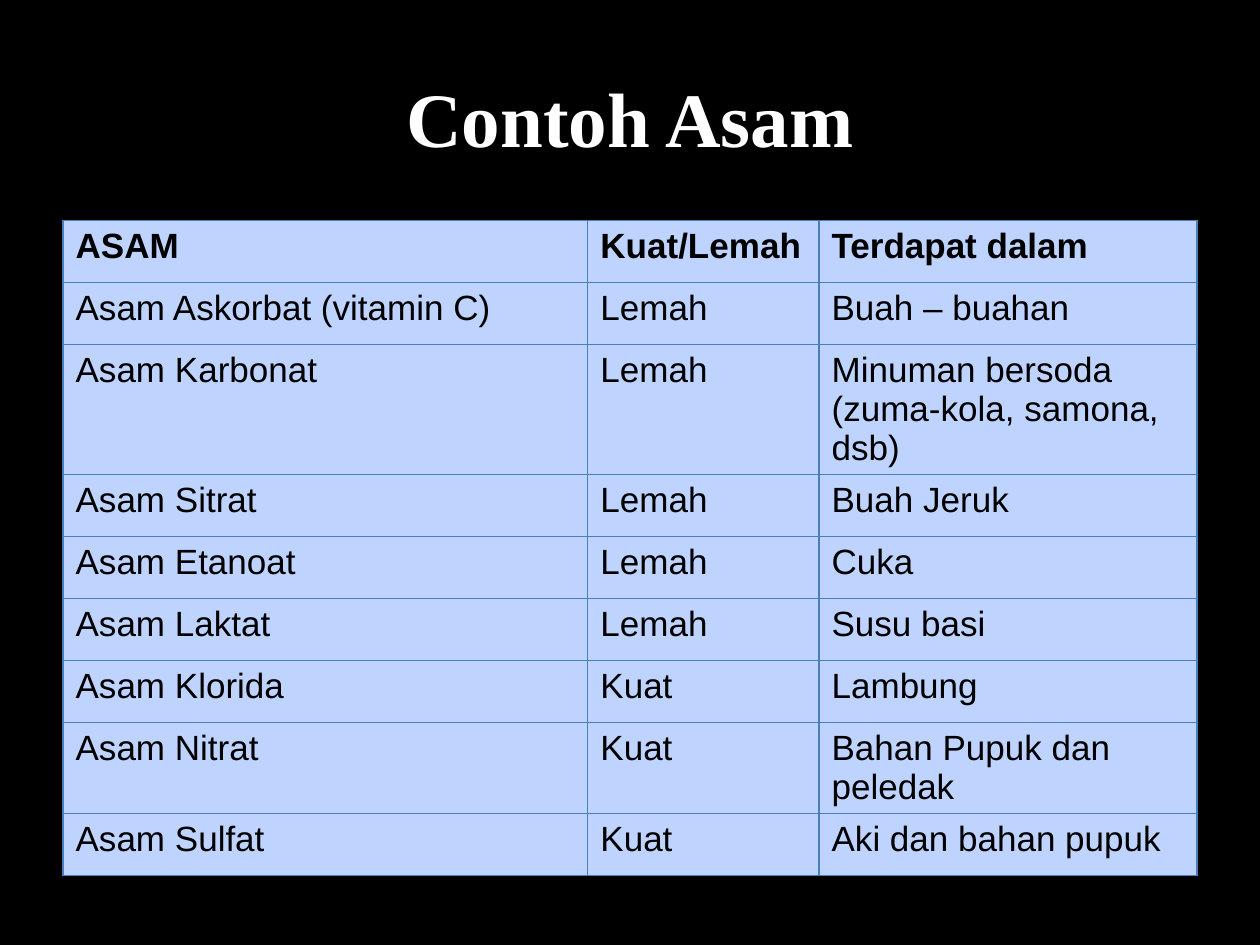
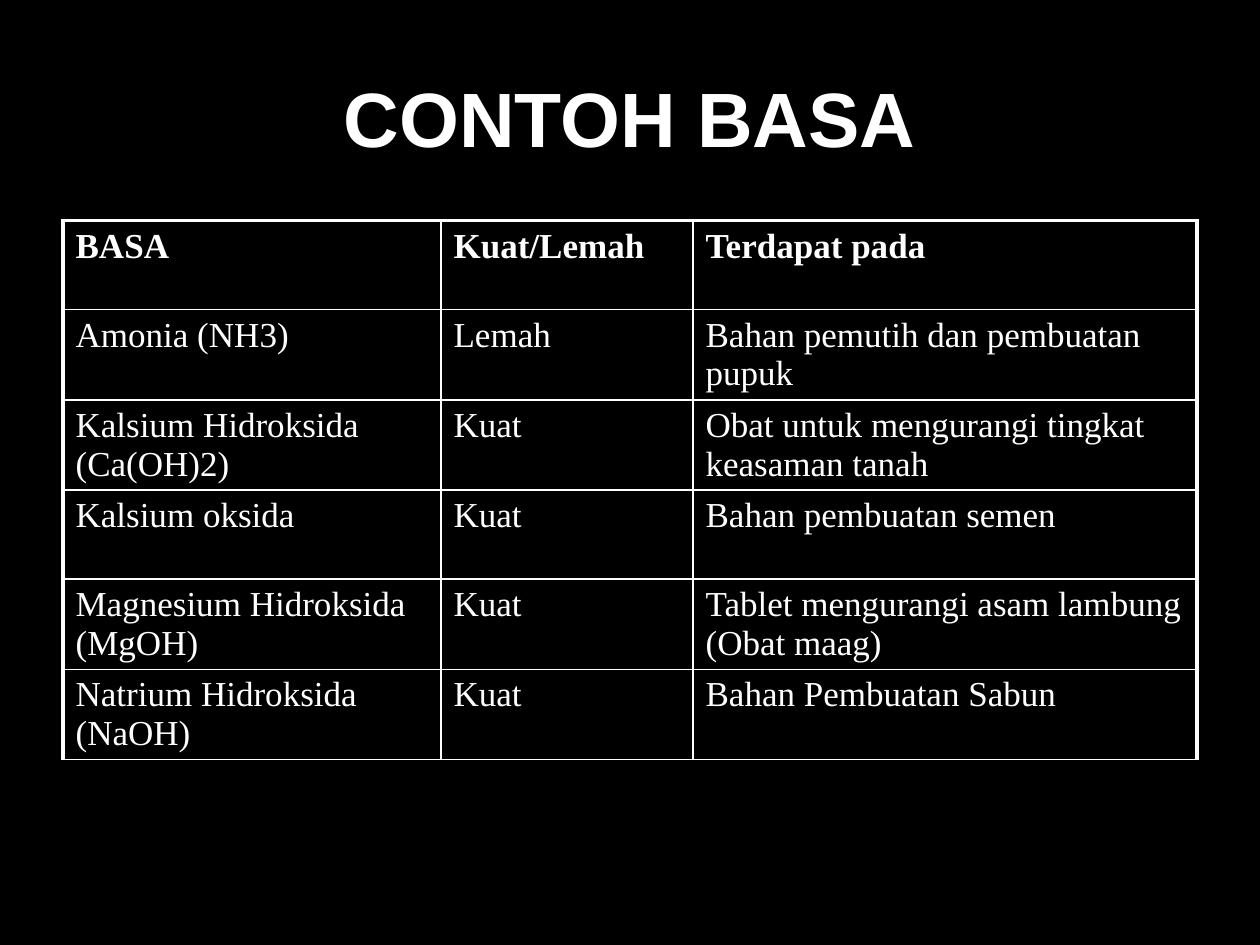
from lxml import etree
from pptx import Presentation
from pptx.dml.color import RGBColor
from pptx.enum.text import MSO_ANCHOR, PP_ALIGN
from pptx.oxml.ns import qn
from pptx.util import Cm, Pt

CENTER, LEFT = PP_ALIGN.CENTER, PP_ALIGN.LEFT
MIDDLE = MSO_ANCHOR.MIDDLE
TITLE_ONLY = 5

COLORS = {
    "background": "000000",
    "light": "FFFFFF",
    "dark": "000000",
    "acid_fill": "BFD3FF",
    "acid_border": "4B7EBC",
}
SANS, SERIF = "Arial", "Times New Roman"
TITLE_SIZE, TABLE_SIZE = 44, 20

MARGIN, CONTENT_WIDTH = 1.27, 22.86
TITLE_TOP, TITLE_HEIGHT = 0.76, 3.18
TABLE_TOP = 4.45

# Border widths are in points: inner lines, outer lines, and the bottom edge.
PAGES = [
    {
        "title": "Contoh Asam",
        "title_font": SERIF,
        "table_font": SANS,
        "text": "dark",
        "fill": "acid_fill",
        "border": "acid_border",
        "widths": {"inner": 0.75, "outer": 0.75, "bottom": 0.75},
        "columns": [10.58, 4.66, 7.62],
        "row_height": 1.25,
        "rows": [
            ("ASAM", "Kuat/Lemah", "Terdapat dalam"),
            ("Asam Askorbat (vitamin C)", "Lemah", "Buah – buahan"),
            ("Asam Karbonat", "Lemah", "Minuman bersoda (zuma-kola, samona, dsb)"),
            ("Asam Sitrat", "Lemah", "Buah Jeruk"),
            ("Asam Etanoat", "Lemah", "Cuka"),
            ("Asam Laktat", "Lemah", "Susu basi"),
            ("Asam Klorida", "Kuat", "Lambung"),
            ("Asam Nitrat", "Kuat", "Bahan Pupuk dan peledak"),
            ("Asam Sulfat", "Kuat", "Aki dan bahan pupuk"),
        ],
    },
    {
        "title": "CONTOH BASA",
        "title_font": SANS,
        "table_font": SERIF,
        "text": "light",
        "fill": None,
        "border": "light",
        "widths": {"inner": 1, "outer": 2.25, "bottom": 1},
        "columns": [7.62, 5.08, 10.16],
        "row_height": 1.79,
        "rows": [
            ("BASA", "Kuat/Lemah", "Terdapat pada"),
            ("Amonia (NH3)", "Lemah", "Bahan pemutih dan pembuatan pupuk"),
            ("Kalsium Hidroksida (Ca(OH)2)", "Kuat",
             "Obat untuk mengurangi tingkat keasaman tanah"),
            ("Kalsium oksida", "Kuat", "Bahan pembuatan semen"),
            ("Magnesium Hidroksida (MgOH)", "Kuat",
             "Tablet mengurangi asam lambung (Obat maag)"),
            ("Natrium Hidroksida (NaOH)", "Kuat", "Bahan Pembuatan Sabun"),
        ],
    },
]


def rgb(name):
    return RGBColor.from_string(COLORS[name])


def write_text(frame, text, *, font, size, color, bold=False, align=LEFT):
    para = frame.paragraphs[0]
    para.alignment = align
    span = para.add_run()
    span.text = text
    span.font.name = font
    span.font.size = Pt(size)
    span.font.bold = bold
    span.font.color.rgb = rgb(color)


def draw_border(cell, side, width, color):
    """Add one edge line; side is L, R, T or B, and edges must come in that order."""
    properties = cell._tc.get_or_add_tcPr()
    line = etree.SubElement(properties, qn(f"a:ln{side}"), w=str(Pt(width)))
    fill = etree.SubElement(line, qn("a:solidFill"))
    etree.SubElement(fill, qn("a:srgbClr"), val=COLORS[color])


def add_title(slide, page):
    title = slide.shapes.title
    title.left, title.top = Cm(MARGIN), Cm(TITLE_TOP)
    title.width, title.height = Cm(CONTENT_WIDTH), Cm(TITLE_HEIGHT)
    title.text_frame.vertical_anchor = MIDDLE
    write_text(title.text_frame, page["title"], font=page["title_font"],
               size=TITLE_SIZE, color="light", bold=True, align=CENTER)


def add_substance_table(slide, page):
    rows, columns, widths = page["rows"], page["columns"], page["widths"]
    last_row, last_column = len(rows) - 1, len(columns) - 1
    table = slide.shapes.add_table(
        len(rows), len(columns), Cm(MARGIN), Cm(TABLE_TOP),
        Cm(CONTENT_WIDTH), Cm(page["row_height"] * len(rows))).table
    table.horz_banding = False
    for column, width in zip(table.columns, columns):
        column.width = Cm(width)
    for r, texts in enumerate(rows):
        table.rows[r].height = Cm(page["row_height"])
        for c, text in enumerate(texts):
            cell = table.cell(r, c)
            edges = {
                "L": "outer" if c == 0 else "inner",
                "R": "outer" if c == last_column else "inner",
                "T": "outer" if r == 0 else "inner",
                "B": "bottom" if r == last_row else "inner",
            }
            for side, kind in edges.items():
                draw_border(cell, side, widths[kind], page["border"])
            if page["fill"]:
                cell.fill.solid()
                cell.fill.fore_color.rgb = rgb(page["fill"])
            else:
                cell.fill.background()
            write_text(cell.text_frame, text, font=page["table_font"],
                       size=TABLE_SIZE, color=page["text"], bold=r == 0)


def main():
    deck = Presentation()
    deck.slide_width, deck.slide_height = Cm(25.4), Cm(19.05)
    background = deck.slide_master.background.fill
    background.solid()
    background.fore_color.rgb = rgb("background")
    for page in PAGES:
        slide = deck.slides.add_slide(deck.slide_layouts[TITLE_ONLY])
        add_title(slide, page)
        add_substance_table(slide, page)
    deck.save("out.pptx")


if __name__ == "__main__":
    main()
